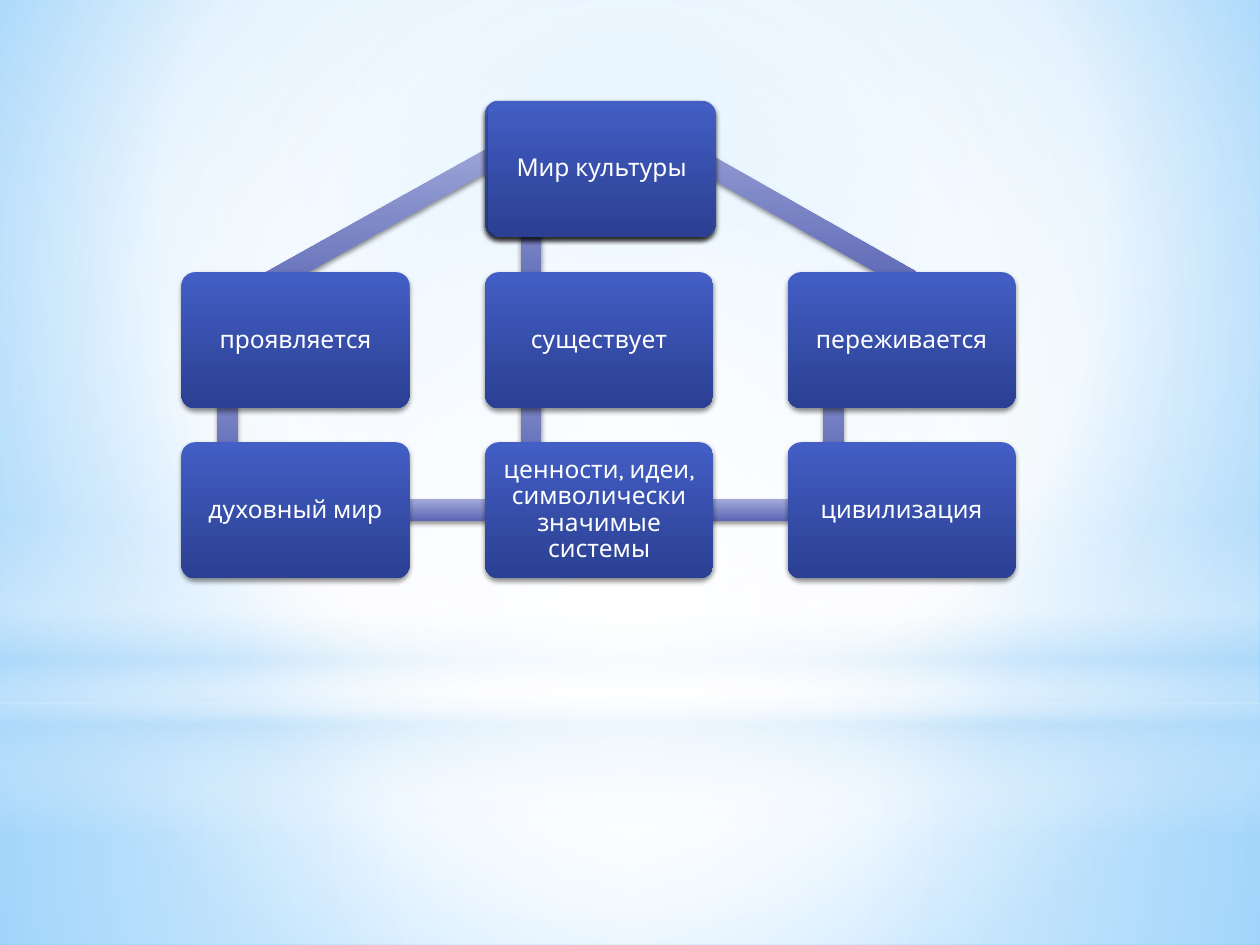
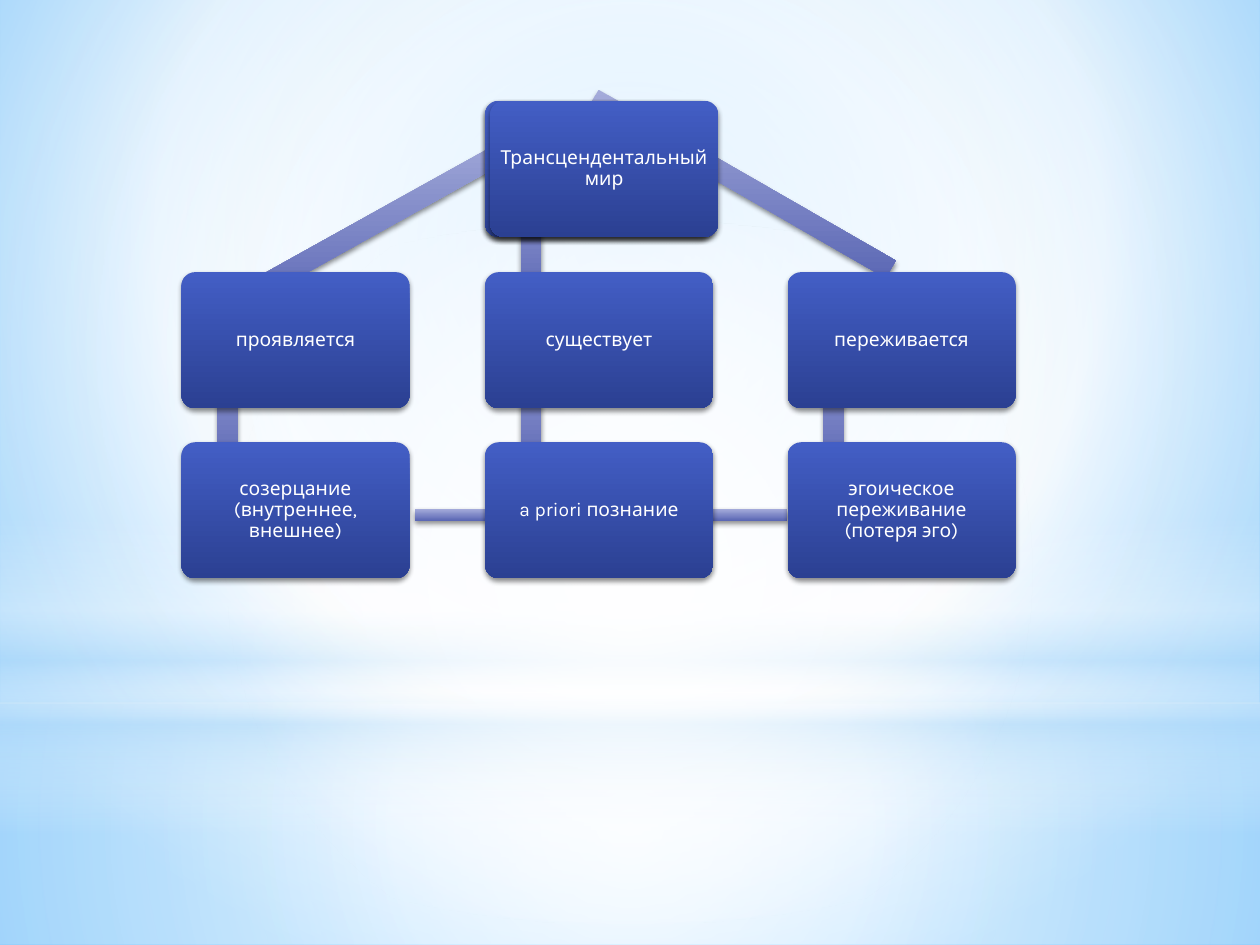
from dataclasses import dataclass

from lxml import etree
from pptx import Presentation
from pptx.dml.color import RGBColor
from pptx.enum import shapes, text
from pptx.oxml.ns import nsdecls, qn
from pptx.util import Inches, Pt

FONT = "Karla"
WHITE = "FFFFFF"
SKY = "B4DCFA"
KIND = shapes.MSO_SHAPE
MID = (50, 50, 50, 50)
COLS = (1.44, 3.85, 6.25)
ROWS = (0.8, 2.16, 3.51)
BOX_W, BOX_H = 1.81, 1.08
LINK_H = 0.16


@dataclass(frozen=True)
class Grad:
    """Stops are (position, colour, opacity) in percent; focus makes it circular."""
    stops: tuple
    focus: tuple | None = None


@dataclass(frozen=True)
class Part:
    left: float
    top: float
    wide: float
    high: float
    grad: Grad
    kind: KIND = KIND.RECTANGLE
    turn: float = 0
    shade: bool = False


@dataclass(frozen=True)
class Link:
    left: float
    top: float
    wide: float
    high: float = LINK_H
    turn: float = 0


@dataclass(frozen=True)
class Chart:
    root: str
    ends: tuple
    size: int
    inset: float
    front: float
    links: tuple


BACK = Grad(((0, "9ED5FF", 100), (60, WHITE, 100), (100, "5BB9FF", 100)),
            (20, 10, 20, 60))
BLUE = Grad(((0, "435EC5", 100), (100, "2B4092", 100)))
LILAC = Grad(((0, "A4ABDA", 100), (100, "5C68B5", 100)))
GLOWS = (
    Part(0, 5.58, 10, 1.92,
         Grad(((0, WHITE, 91), (37, WHITE, 76), (100, SKY, 79)), MID)),
    Part(0, 0, 10, 5.58,
         Grad(((0, WHITE, 89), (48, WHITE, 62), (100, SKY, 79)), MID)),
    Part(0, 4.12, 10, 2.5,
         Grad(((0, WHITE, 0), (29, WHITE, 30), (45, SKY, 40),
               (55, WHITE, 26), (65, SKY, 60), (100, WHITE, 0)))),
    Part(0, 1.75, 10, 5.58,
         Grad(((0, WHITE, 100), (56, WHITE, 0)), MID), KIND.OVAL),
)

VERBS = ("проявляется", "существует", "переживается")
# Upright links as (column, upper row)
STEMS = ((0, 1), (1, 1), (1, 0), (2, 1))
CHARTS = (
    Chart("Мир культуры",
          ("духовный мир", "ценности, идеи, символически значимые системы",
           "цивилизация"),
          14, 0.06, 3.87,
          (Link(1.63, 1.67, 2.76, turn=150.8), Link(4.67, 1.47, 2.74, turn=29.6),
           Link(3.14, 3.96, 3.12, 0.17))),
    Chart("Трансцендентальный мир",
          ("созерцание (внутреннее, внешнее)", "a priori познание",
           "эгоическое переживание (потеря эго)"),
          11, 0.05, 3.89,
          (Link(1.63, 1.67, 2.77, turn=150.9), Link(4.53, 1.38, 2.72, turn=29.9),
           Link(3.29, 4.04, 2.96, 0.09))),
)


def paint(root, grad: Grad) -> None:
    """Put the gradient in place of the first empty fill under root."""
    stops = "".join(
        f'<a:gs pos="{pos * 1000}"><a:srgbClr val="{tint}">'
        f'<a:alpha val="{alpha * 1000}"/></a:srgbClr></a:gs>'
        for pos, tint, alpha in grad.stops)
    if grad.focus:
        sides = " ".join(f'{side}="{num * 1000}"'
                         for side, num in zip("ltrb", grad.focus))
        way = f'<a:path path="circle"><a:fillToRect {sides}/></a:path>'
    else:
        way = '<a:lin ang="5400000" scaled="0"/>'
    fill = etree.fromstring(
        f'<a:gradFill {nsdecls("a")} rotWithShape="0">'
        f'<a:gsLst>{stops}</a:gsLst>{way}</a:gradFill>')
    hole = next(root.iter(qn("a:noFill")))
    hole.getparent().replace(hole, fill)


def drop(props) -> None:
    """Add a soft shadow below the shape."""
    props.find(qn("a:effectLst")).append(etree.fromstring(
        f'<a:outerShdw {nsdecls("a")} blurRad="{Pt(3.1)}" dist="{Pt(1.8)}" '
        'dir="5400000" rotWithShape="0"><a:srgbClr val="000000">'
        '<a:alpha val="45000"/></a:srgbClr></a:outerShdw>'))


def draw(slide, part: Part):
    shape = slide.shapes.add_shape(
        part.kind, Inches(part.left), Inches(part.top),
        Inches(part.wide), Inches(part.high))
    shape.rotation = part.turn
    shape.fill.background()
    shape.line.fill.background()
    shape.shadow.inherit = False
    props = shape.element.spPr
    paint(props, part.grad)
    if part.shade:
        drop(props)
    return shape


def write(shape, words: str, *, size: int, inset: float, tint: str = WHITE) -> None:
    frame = shape.text_frame
    frame.word_wrap = True
    frame.vertical_anchor = text.MSO_ANCHOR.MIDDLE
    frame.margin_left = frame.margin_right = Inches(inset)
    frame.margin_top = frame.margin_bottom = Inches(inset)
    para = frame.paragraphs[0]
    para.alignment = text.PP_ALIGN.CENTER
    para.line_spacing = 0.9
    run = para.add_run()
    run.text = words
    run.font.name = FONT
    run.font.size = Pt(size)
    run.font.color.rgb = RGBColor.from_string(tint)


def box(slide, left: float, top: float):
    shape = draw(slide, Part(left, top, BOX_W, BOX_H, BLUE,
                             KIND.ROUNDED_RECTANGLE, shade=True))
    shape.adjustments[0] = 0.1
    return shape


def stem(col: int, row: int) -> Link:
    return Link(COLS[col] - 0.31, ROWS[row] + 0.87, 1.35, turn=90)


def build(slide, chart: Chart) -> None:
    for glow in GLOWS:
        draw(slide, glow)
    for link in chart.links + tuple(stem(*spot) for spot in STEMS):
        draw(slide, Part(link.left, link.top, link.wide, link.high, LILAC,
                         turn=link.turn, shade=True))
    for _ in range(2):
        box(slide, COLS[1], ROWS[0])
    cells = [(chart.front, ROWS[0], chart.root)]
    for top, names in zip(ROWS[1:], (VERBS, chart.ends)):
        cells += [(left, top, name) for left, name in zip(COLS, names)]
    for left, top, name in cells:
        write(box(slide, left, top), name, size=chart.size, inset=chart.inset)


def main() -> None:
    deck = Presentation()
    deck.slide_width, deck.slide_height = Inches(10), Inches(7.5)
    master = deck.slide_master
    master.background.fill.background()
    paint(master.element, BACK)
    for chart in CHARTS:
        build(deck.slides.add_slide(deck.slide_layouts[6]), chart)
    deck.save("out.pptx")


if __name__ == "__main__":
    main()
